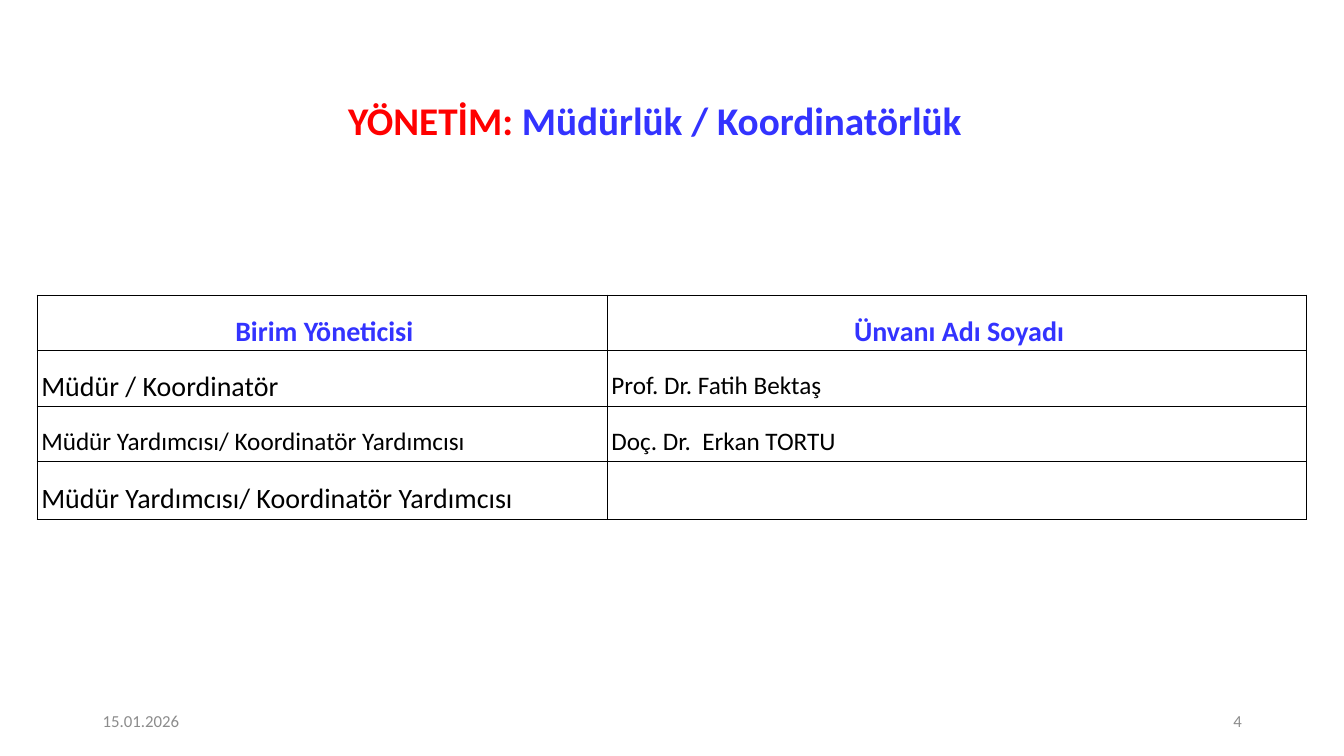
import pptx
import pptx.dml.color
import pptx.enum.text
import pptx.oxml
import pptx.oxml.ns
import pptx.util

Cm = pptx.util.Cm
ALIGN = pptx.enum.text.PP_ALIGN
MIDDLE = pptx.enum.text.MSO_ANCHOR.MIDDLE
COLORS = {"red": "FF0000", "blue": "3333FF", "black": "000000", "gray": "8C8C8C"}


class SlideBuilder:
    """Holds the text style and the current slide, and adds elements to it."""

    font_name = "Calibri"
    border_width = pptx.util.Pt(1)

    def __init__(self, presentation):
        self.slide = presentation.slides.add_slide(presentation.slide_layouts[5])

    def style(self, run, size, color, bold=False):
        run.font.name = self.font_name
        run.font.size = pptx.util.Pt(size)
        run.font.bold = bold
        run.font.color.rgb = pptx.dml.color.RGBColor.from_string(COLORS[color])

    def title(self, parts, left, top, width, height, size):
        shape = self.slide.shapes.title
        shape.left, shape.top, shape.width, shape.height = map(Cm, (left, top, width, height))
        shape.text_frame.vertical_anchor = MIDDLE
        paragraph = shape.text_frame.paragraphs[0]
        paragraph.alignment = ALIGN.CENTER
        paragraph.line_spacing = 0.9
        for text, color in parts:
            run = paragraph.add_run()
            run.text = text
            self.style(run, size, color, bold=True)

    def footer(self, text, left, alignment):
        shape = self.slide.shapes.add_textbox(Cm(left), Cm(17.65), Cm(7.62), Cm(1.01))
        text_frame = shape.text_frame
        text_frame.word_wrap = True
        text_frame.vertical_anchor = MIDDLE
        text_frame.text = text
        paragraph = text_frame.paragraphs[0]
        paragraph.alignment = alignment
        self.style(paragraph.runs[0], 12, "gray")

    def border(self, cell):
        properties = cell._tc.get_or_add_tcPr()
        for side in ("lnL", "lnR", "lnT", "lnB"):
            properties.append(pptx.oxml.parse_xml(
                f'<a:{side} {pptx.oxml.ns.nsdecls("a")} w="{self.border_width}"><a:solidFill>'
                f'<a:srgbClr val="{COLORS["black"]}"/></a:solidFill></a:{side}>'))

    def cell(self, cell, text, size, header):
        cell.margin_left = Cm(0.1)
        cell.margin_right = cell.margin_top = cell.margin_bottom = 0
        cell.vertical_anchor = MIDDLE
        self.border(cell)
        cell.fill.background()
        cell.text = text
        paragraph = cell.text_frame.paragraphs[0]
        paragraph.line_spacing = 1.5
        paragraph.alignment = ALIGN.CENTER if header else ALIGN.LEFT
        for run in paragraph.runs:
            self.style(run, size, "blue" if header else "black", bold=header)

    def table(self, rows, left, top, column_widths, row_heights):
        frame = self.slide.shapes.add_table(
            len(rows), len(column_widths), Cm(left), Cm(top),
            Cm(sum(column_widths)), Cm(sum(row_heights)))
        table = frame.table
        table.first_row = table.horz_banding = False
        for column, width in zip(table.columns, column_widths):
            column.width = Cm(width)
        for row_index, (row, height) in enumerate(zip(rows, row_heights)):
            table.rows[row_index].height = Cm(height)
            for column_index, (text, size) in enumerate(row):
                self.cell(table.cell(row_index, column_index), text, size, row_index == 0)


def main():
    presentation = pptx.Presentation()
    presentation.slide_width = Cm(33.87)
    presentation.slide_height = Cm(19.05)
    builder = SlideBuilder(presentation)
    builder.title([("YÖNETİM: ", "red"), ("Müdürlük / Koordinatörlük", "blue")],
                  2.9, 2.13, 27.2, 1.93, 28)
    managers = [
        [("Birim Yöneticisi", 20), ("Ünvanı Adı Soyadı", 20)],
        [("Müdür / Koordinatör", 20), ("Prof. Dr. Fatih Bektaş", 18)],
        [("Müdür Yardımcısı/ Koordinatör Yardımcısı", 18), ("Doç. Dr.  Erkan TORTU", 18)],
        [("Müdür Yardımcısı/ Koordinatör Yardımcısı", 20), ("", 18)],
    ]
    builder.table(managers, 0.94, 7.44, [14.37, 17.62], [1.4, 1.4, 1.4, 1.45])
    builder.footer("15.01.2026", 2.34, ALIGN.LEFT)
    builder.footer("4", 23.93, ALIGN.RIGHT)
    presentation.save("out.pptx")


if __name__ == "__main__":
    main()
